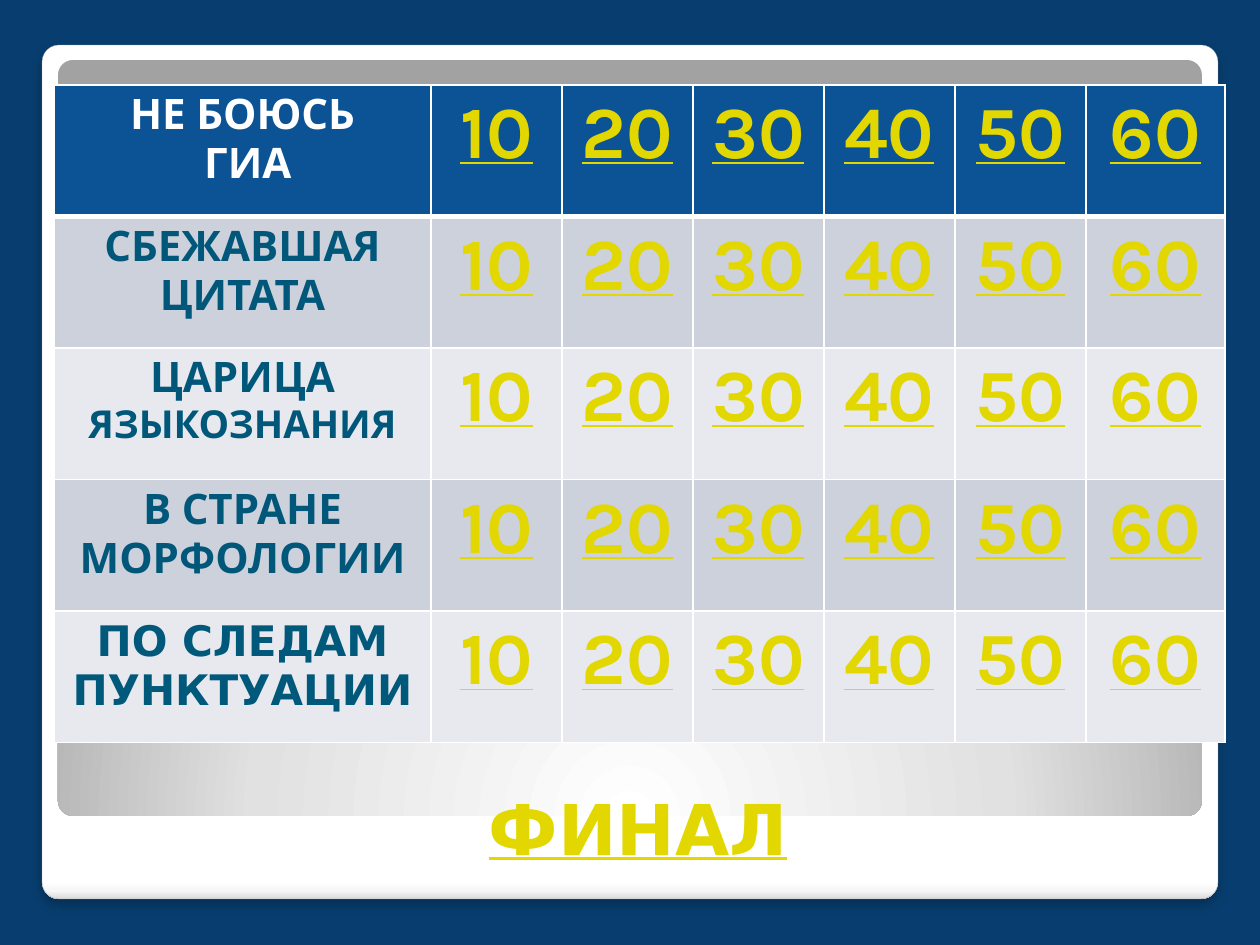
import lxml.etree
import pptx
import pptx.dml.color
import pptx.enum.shapes
import pptx.enum.text
import pptx.oxml
import pptx.oxml.ns
import pptx.util

COLORS = {
    "background": "083E6F", "white": "FFFFFF", "frame": "A4A4A4",
    "header": "0B5394", "dark_band": "CCD1DC", "light_band": "E7E9EE",
    "topic": "005779", "last_topic": "00587A", "score": "E2D700",
}
NAMESPACE = 'xmlns:a="http://schemas.openxmlformats.org/drawingml/2006/main"'
DISPLAY_FONT = "Karla"
PLAIN_FONT = "DejaVu Sans"
EMU_PER_PX = 914400 / 126


def px(length):
    return pptx.util.Emu(round(length * EMU_PER_PX))


def rgb(name):
    return pptx.dml.color.RGBColor.from_string(COLORS[name])


class SlideBuilder:
    def __init__(self, slide):
        self.slide = slide

    def background(self, color):
        fill = self.slide.background.fill
        fill.solid()
        fill.fore_color.rgb = rgb(color)

    def panel(self, left, top, width, height, stops, direction, line=None, shadow=""):
        """Add a rounded panel; direction is the XML that ends its gradient."""
        shape = self.slide.shapes.add_shape(
            pptx.enum.shapes.MSO_SHAPE.ROUNDED_RECTANGLE,
            px(left), px(top), px(width), px(height))
        shape.adjustments[0] = 0.02
        shape.shadow.inherit = False
        if line:
            shape.line.color.rgb = rgb(line)
            shape.line.width = pptx.util.Pt(0.16)
        else:
            shape.line.fill.background()
        colors = "".join(
            f'<a:gs pos="{position * 1000}"><a:srgbClr val="{color}"/></a:gs>'
            for position, color in stops)
        gradient = pptx.oxml.parse_xml(
            f'<a:gradFill {NAMESPACE} rotWithShape="1"><a:gsLst>{colors}</a:gsLst>'
            f'{direction}</a:gradFill>')
        properties = shape.element.spPr
        properties.find(pptx.oxml.ns.qn("a:prstGeom")).addnext(gradient)
        if shadow:
            effects = properties.find(pptx.oxml.ns.qn("a:effectLst"))
            effects.append(pptx.oxml.parse_xml(shadow))

    def paragraph(self, paragraph, runs, font, color, underline=False):
        paragraph.alignment = pptx.enum.text.PP_ALIGN.CENTER
        for text, size in runs:
            run = paragraph.add_run()
            run.text = text
            run.font.name = font
            run.font.size = pptx.util.Pt(size)
            run.font.bold = True
            run.font.underline = underline
            run.font.color.rgb = rgb(color)

    def title(self, left, top, width, height, text):
        box = self.slide.shapes.add_textbox(px(left), px(top), px(width), px(height))
        frame = box.text_frame
        frame.word_wrap = True
        frame.vertical_anchor = pptx.enum.text.MSO_ANCHOR.BOTTOM
        self.paragraph(frame.paragraphs[0], [(text, 40)], PLAIN_FONT, "score", True)

    def cell(self, cell, fill, bottom_width):
        cell.fill.solid()
        cell.fill.fore_color.rgb = rgb(fill)
        properties = cell.fill._xPr
        widths = {"lnL": 1, "lnR": 1, "lnT": 1, "lnB": bottom_width}
        for index, (edge, width) in enumerate(widths.items()):
            properties.insert(index, pptx.oxml.parse_xml(
                f'<a:{edge} {NAMESPACE} w="{pptx.util.Pt(width)}"><a:solidFill>'
                f'<a:srgbClr val="{COLORS["white"]}"/></a:solidFill></a:{edge}>'))

    def score_table(self, left, top, height, column_widths, topics, scores):
        table = self.slide.shapes.add_table(
            len(topics), len(column_widths), px(left), px(top),
            px(sum(column_widths)), px(height)).table
        for column, width in zip(table.columns, column_widths):
            column.width = px(width)
        for row, (lines, font, color) in enumerate(topics):
            fill = "header" if row == 0 else ("light_band", "dark_band")[row % 2]
            for cell in table.rows[row].cells:
                self.cell(cell, fill, 3 if row == 0 else 1)
            frame = table.cell(row, 0).text_frame
            for index, runs in enumerate(lines):
                paragraph = frame.add_paragraph() if index else frame.paragraphs[0]
                self.paragraph(paragraph, runs, font, color)
            for column, score in enumerate(scores, start=1):
                paragraph = table.cell(row, column).text_frame.paragraphs[0]
                self.paragraph(paragraph, [(str(score), 42)], DISPLAY_FONT, "score", True)


def main():
    presentation = pptx.Presentation()
    presentation.slide_width = px(1260)
    presentation.slide_height = px(945)
    builder = SlideBuilder(presentation.slides.add_slide(presentation.slide_layouts[6]))

    builder.background("background")
    builder.panel(
        42, 45, 1176, 854,
        [(0, "FFFFFF"), (98, "FFFFFF"), (99, "F7F7F7"), (100, "DADADA")],
        '<a:lin ang="5400000" scaled="0"/>', line="frame",
        shadow=f'<a:outerShdw {NAMESPACE} blurRad="76200" dist="50800" dir="5400000" '
               'algn="tl" rotWithShape="0"><a:srgbClr val="000000">'
               '<a:alpha val="25000"/></a:srgbClr></a:outerShdw>')
    builder.panel(
        58, 60, 1144, 756, [(0, "FFFFFF"), (55, "E1E1E1"), (100, "A2A2A2")],
        '<a:path path="circle"><a:fillToRect l="50000" t="175000" r="50000" b="-75000"/>'
        '</a:path>')
    builder.title(74, 731, 1128, 145, "ФИНАЛ")

    topics = [
        ([[("НЕ БОЮСЬ", 24)], [(" ГИА", 24)]], DISPLAY_FONT, "white"),
        ([[("СБЕЖАВШАЯ ЦИТАТА", 24)]], DISPLAY_FONT, "topic"),
        ([[("ЦАРИЦА ", 24), ("ЯЗЫКОЗНАНИЯ", 22)]], DISPLAY_FONT, "topic"),
        ([[("В СТРАНЕ МОРФОЛОГИИ", 24)]], DISPLAY_FONT, "topic"),
        ([[("ПО СЛЕДАМ ПУНКТУАЦИИ", 24)]], PLAIN_FONT, "last_topic"),
    ]
    builder.score_table(54, 85, 658, [377] + [131] * 5 + [139], topics, range(10, 70, 10))
    presentation.save("out.pptx")


if __name__ == "__main__":
    main()
